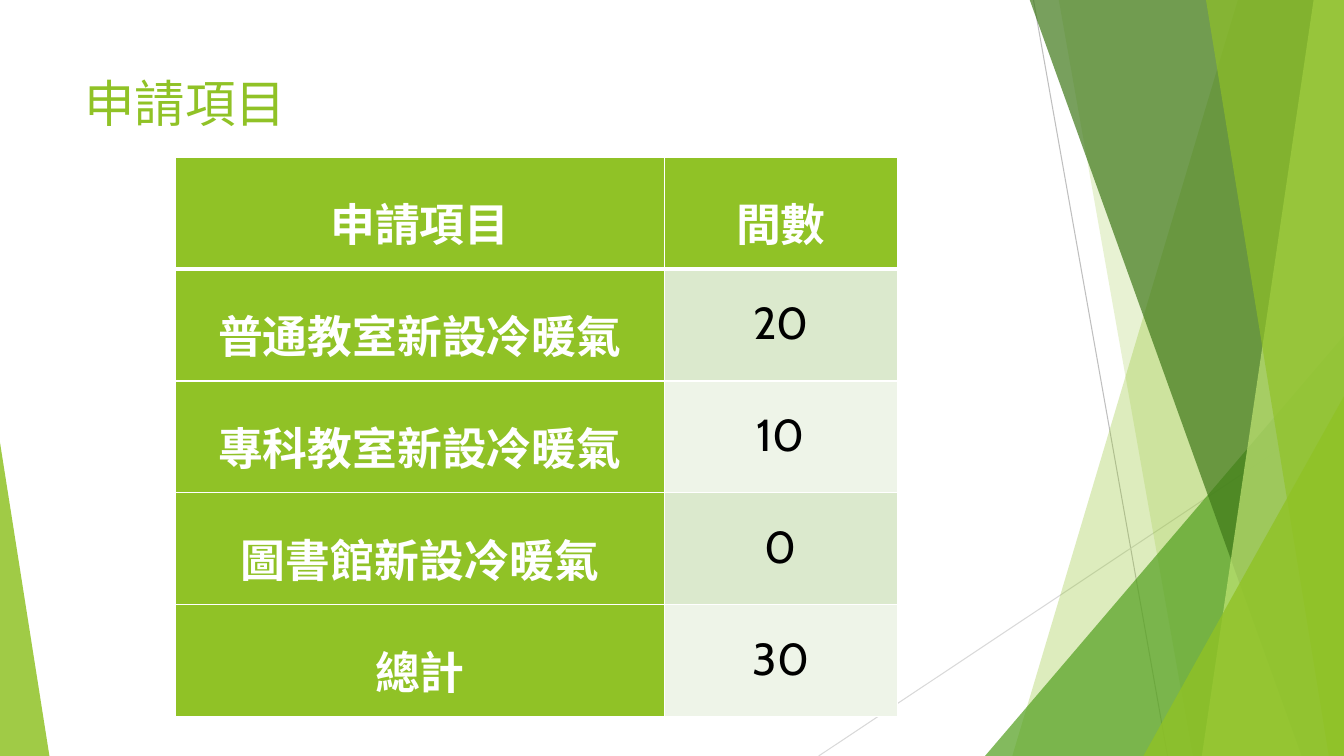
from dataclasses import dataclass

from lxml.etree import SubElement
from pptx import Presentation
from pptx.dml.color import RGBColor
from pptx.enum.shapes import MSO_CONNECTOR as Connector, MSO_SHAPE as Preset
from pptx.enum.text import MSO_ANCHOR as Anchor, PP_ALIGN as Align
from pptx.oxml.ns import qn
from pptx.shapes.autoshape import Shape
from pptx.slide import Slide
from pptx.table import _Cell as Cell
from pptx.text.text import TextFrame
from pptx.util import Inches, Pt

WIDTH, HEIGHT = 13.33, 7.5
TOP = -0.01
GREEN, WHITE, BLACK = "90C226", "FFFFFF", "000000"
BANDS = ["DBE9CD", "EEF4E8"]
COLUMN_WIDTHS = [4.85, 2.31]
ROW_HEIGHT = 1.11
ROWS = [
    ("申請項目", "間數"),
    ("普通教室新設冷暖氣", "20"),
    ("專科教室新設冷暖氣", "10"),
    ("圖書館新設冷暖氣", "0"),
    ("總計", "30"),
]


@dataclass
class Ray:
    start: tuple[float, float]
    end: tuple[float, float]
    color: str


@dataclass
class Blade:
    top_left: float
    bottom_left: float
    color: str
    opacity: int


@dataclass
class Corner:
    left: float
    top: float
    width: float
    apex: float
    color: str
    opacity: int


RAYS = [
    Ray((10.25, 0), (11.58, HEIGHT), "BFBFBF"),
    Ray((WIDTH, 4.03), (8.12, HEIGHT), "D9D9D9"),
]
FACETS = [
    Blade(12.28, 10.04, GREEN, 30),
    Blade(10.5, 11.83, GREEN, 20),
    Corner(9.77, 3.33, 3.56, 1, "54A021", 72),
    Blade(10.21, 12.91, "3F7819", 70),
    Blade(13.03, 11.92, "C0E474", 70),
    Blade(11.96, 13.18, GREEN, 65),
    Corner(11.34, 3.93, 1.99, 1, GREEN, 80),
    Corner(0, 4.39, 0.49, 0, GREEN, 85),
]


def rgb(color: str) -> RGBColor:
    return RGBColor.from_string(color)


def draw_ray(page: Slide, ray: Ray) -> None:
    ends = [Inches(value) for value in ray.start + ray.end]
    line = page.shapes.add_connector(Connector.STRAIGHT, *ends)
    line.line.color.rgb = rgb(ray.color)
    line.line.width = Pt(0.75)
    SubElement(line._element.spPr, qn("a:effectLst"))


def build_blade(page: Slide, blade: Blade) -> Shape:
    corners = [(blade.top_left, TOP), (WIDTH, TOP), (WIDTH, HEIGHT), (blade.bottom_left, HEIGHT)]
    points = [(Inches(x), Inches(y)) for x, y in corners]
    builder = page.shapes.build_freeform(*points[0])
    builder.add_line_segments(points[1:], close=True)
    return builder.convert_to_shape()


def build_corner(page: Slide, corner: Corner) -> Shape:
    bounds = (corner.left, corner.top, corner.width, HEIGHT - corner.top)
    shape = page.shapes.add_shape(Preset.ISOSCELES_TRIANGLE, *map(Inches, bounds))
    shape.adjustments[0] = corner.apex
    return shape


def draw_facet(page: Slide, facet: Blade | Corner) -> None:
    build = build_blade if isinstance(facet, Blade) else build_corner
    shape = build(page, facet)
    shape.shadow.inherit = False
    shape.line.fill.background()
    shape.fill.solid()
    shape.fill.fore_color.rgb = rgb(facet.color)
    tint = shape._element.spPr.find(qn("a:solidFill"))[0]
    SubElement(tint, qn("a:alpha"), val=str(facet.opacity * 1000))


def write(frame: TextFrame, text: str, size: int, color: str, bold: bool = False) -> None:
    span = frame.paragraphs[0].add_run()
    span.text = text
    for name, value in {"name": "Cabin", "size": Pt(size), "bold": bold}.items():
        setattr(span.font, name, value)
    span.font.color.rgb = rgb(color)


def draw_title(page: Slide) -> None:
    box = page.shapes.add_textbox(*map(Inches, (0.74, 0.67, 9.4, 1.44)))
    box.text_frame.word_wrap = True
    write(box.text_frame, "申請項目", 36, GREEN)


def add_borders(cell: Cell, widths: dict[str, int]) -> None:
    properties = cell._tc.get_or_add_tcPr()
    for side, width in widths.items():
        border = SubElement(properties, qn(f"a:ln{side}"), w=str(Pt(width)))
        fill = SubElement(border, qn("a:solidFill"))
        SubElement(fill, qn("a:srgbClr"), val=WHITE)


def fill_cell(cell: Cell, text: str, row: int, column: int) -> None:
    is_header = row == 0 or column == 0
    add_borders(cell, {"L": 1, "R": 1, "T": 3 if row == 1 else 1, "B": 3 if row == 0 else 1})
    cell.fill.solid()
    cell.fill.fore_color.rgb = rgb(GREEN if is_header else BANDS[(row - 1) % 2])
    layout = {
        "margin_left": Inches(0.07),
        "margin_right": Inches(0.07),
        "margin_top": 0,
        "margin_bottom": 0,
        "vertical_anchor": Anchor.TOP,
    }
    for name, value in layout.items():
        setattr(cell, name, value)
    para = cell.text_frame.paragraphs[0]
    for name, value in {"alignment": Align.CENTER, "line_spacing": 1.5}.items():
        setattr(para, name, value)
    write(cell.text_frame, text, 32, WHITE if is_header else BLACK, is_header)


def draw_table(page: Slide) -> None:
    bounds = (1.74, 1.56, sum(COLUMN_WIDTHS), ROW_HEIGHT * len(ROWS))
    table = page.shapes.add_table(len(ROWS), len(COLUMN_WIDTHS), *map(Inches, bounds)).table
    for column, width in zip(table.columns, COLUMN_WIDTHS):
        column.width = Inches(width)
    for row, texts in enumerate(ROWS):
        table.rows[row].height = Inches(ROW_HEIGHT)
        for column, text in enumerate(texts):
            fill_cell(table.cell(row, column), text, row, column)


def main() -> None:
    deck = Presentation()
    deck.slide_width, deck.slide_height = Inches(WIDTH), Inches(HEIGHT)
    page = deck.slides.add_slide(deck.slide_layouts[6])
    for ray in RAYS:
        draw_ray(page, ray)
    for facet in FACETS:
        draw_facet(page, facet)
    draw_title(page)
    draw_table(page)
    deck.save("out.pptx")


if __name__ == "__main__":
    main()
